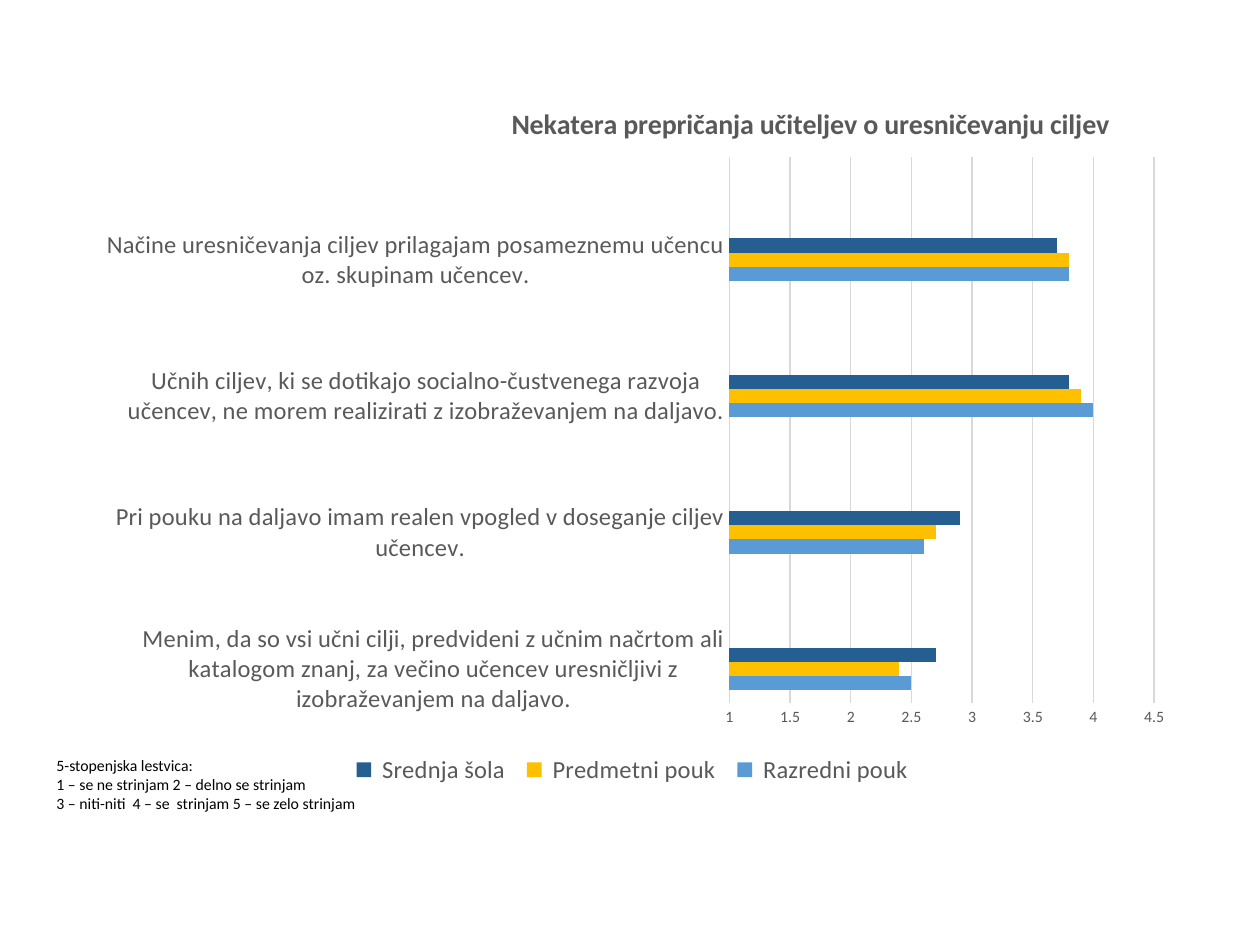
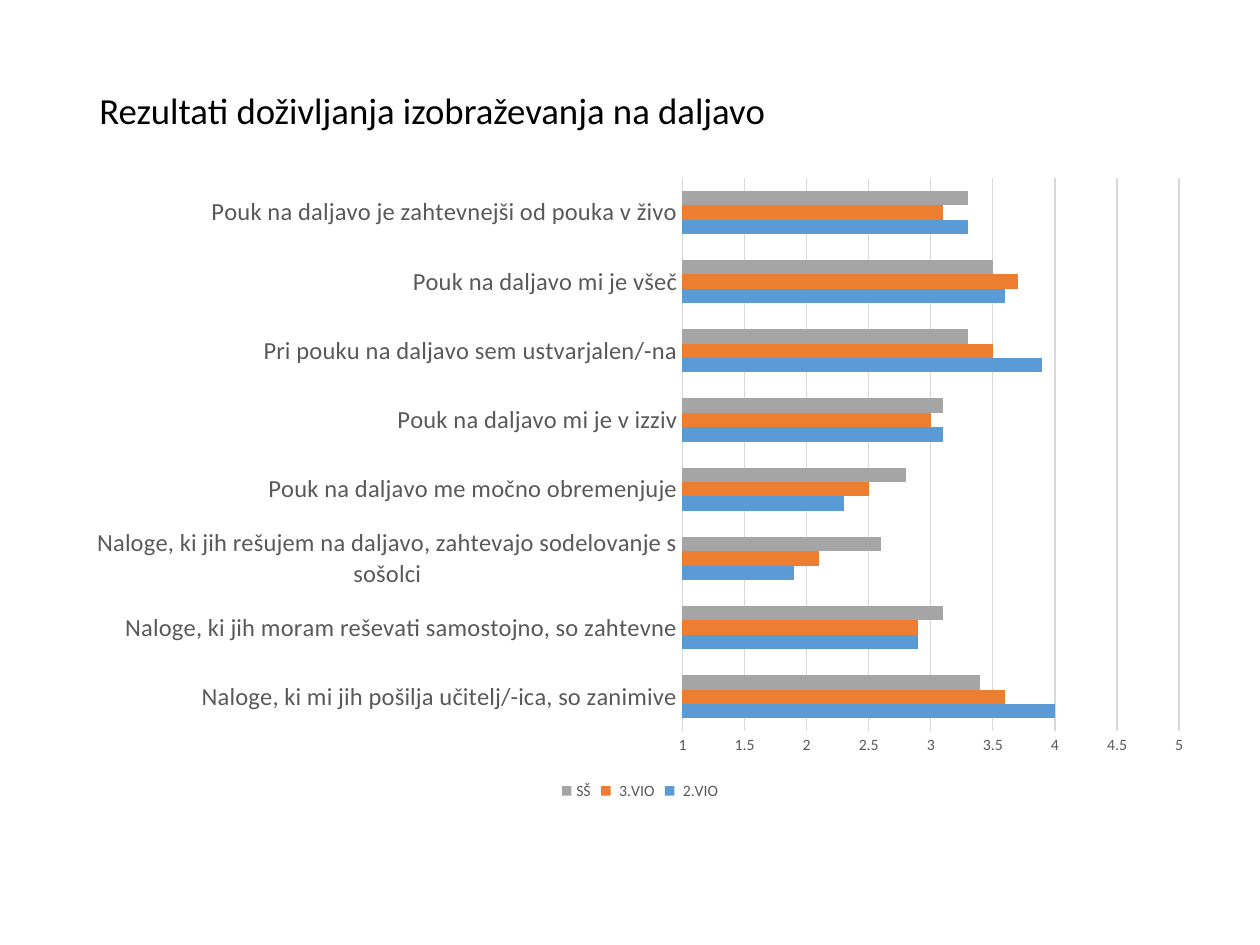
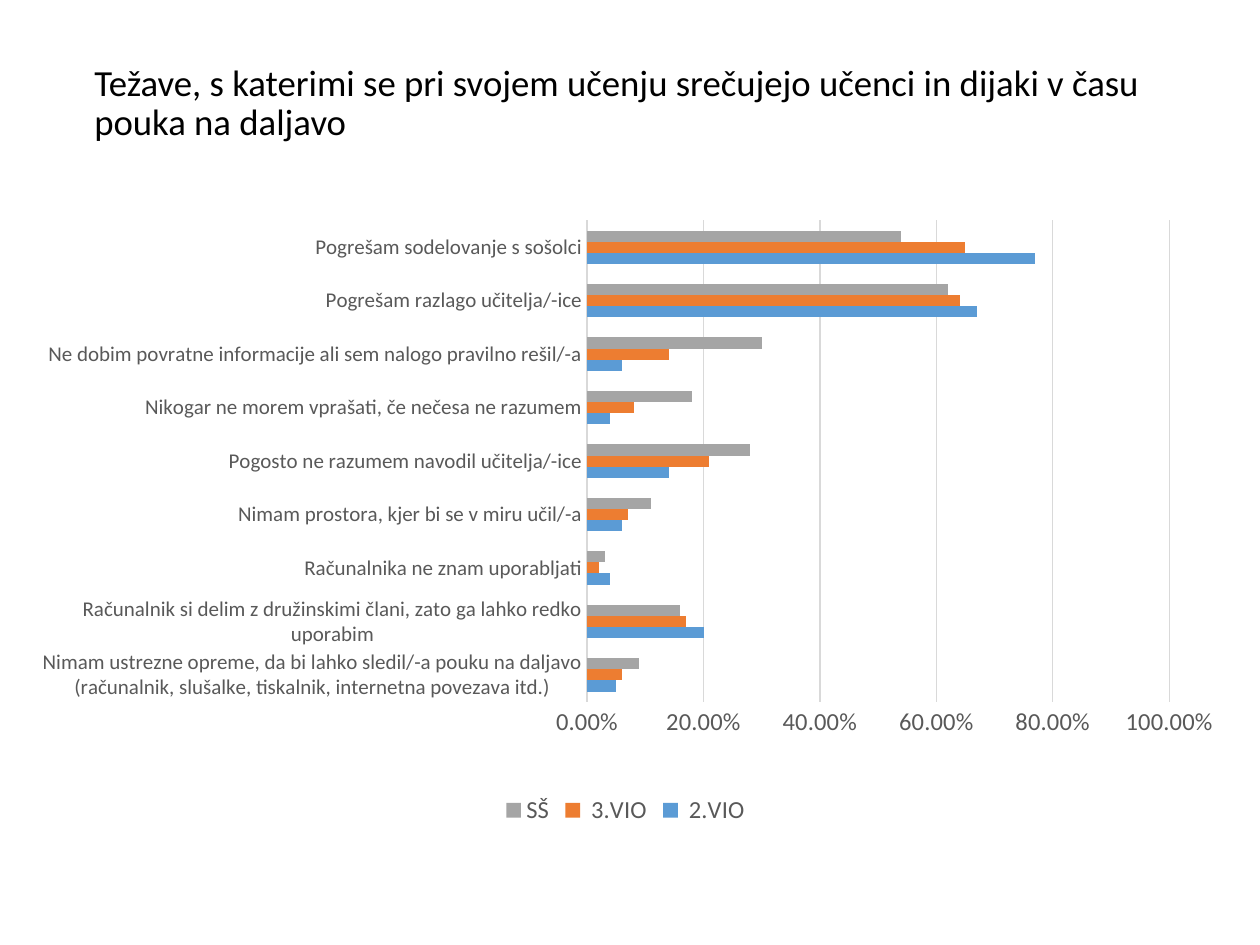
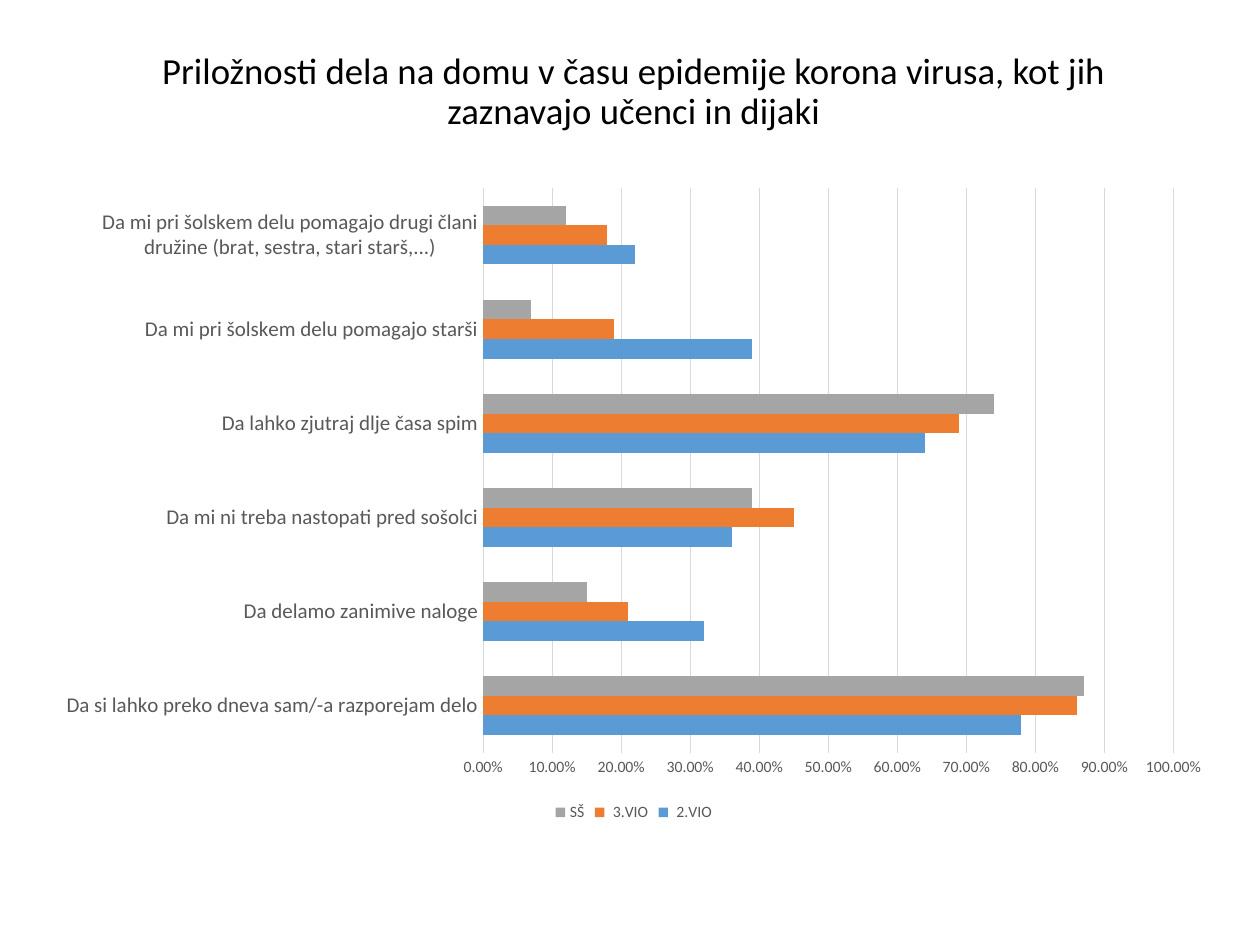
from pptx import Presentation
from pptx.chart.data import CategoryChartData
from pptx.dml.color import RGBColor
from pptx.enum.chart import XL_CHART_TYPE, XL_LEGEND_POSITION, XL_TICK_MARK
from pptx.enum.text import MSO_ANCHOR, PP_ALIGN
from pptx.oxml import parse_xml
from pptx.oxml.ns import nsdecls, qn
from pptx.util import Inches, Pt

COLORS = {
    "text": "000000",
    "label": "595959",
    "grid": "D9D9D9",
    "blue": "5B9BD5",
    "gold": "FFC000",
    "navy": "255E91",
    "orange": "ED7D31",
    "gray": "A5A5A5",
}
FONT = "Calibri"
PUPIL_SERIES = [(" 2.VIO", "blue"), (" 3.VIO", "orange"), ("SŠ", "gray")]


def style_font(font, size, color, bold=False):
    font.name = FONT
    font.size = Pt(size)
    font.bold = bold
    font.color.rgb = RGBColor.from_string(COLORS[color])


def set_layout(element, index, chart_box, left, top, *size):
    chart_left, chart_top, chart_width, chart_height = chart_box
    fractions = [("x", (left - chart_left) / chart_width),
                 ("y", (top - chart_top) / chart_height)]
    if size:
        fractions += [("w", size[0] / chart_width), ("h", size[1] / chart_height)]
    for layout in element.findall(qn("c:layout")):
        element.remove(layout)
    target = '<c:layoutTarget val="inner"/>' if size else ""
    modes = "".join(f'<c:{key}Mode val="edge"/>' for key in ("x", "y"))
    values = "".join(f'<c:{key} val="{value:.4f}"/>' for key, value in fractions)
    element.insert(index, parse_xml(
        f'<c:layout {nsdecls("c")}><c:manualLayout>{target}{modes}{values}'
        "</c:manualLayout></c:layout>"))


slides = [
    {
        "chart_title": "Nekatera prepričanja učiteljev o uresničevanju ciljev",
        "chart_title_at": (4.02, 0.79),
        "note": [
            "5-stopenjska lestvica:",
            "1 – se ne strinjam 2 – delno se strinjam",
            "3 – niti-niti  4 – se  strinjam 5 – se zelo strinjam",
        ],
        "chart_box": (0.67, 0.6, 8.74, 5.67),
        "plot_box": (5.79, 1.25, 3.37, 4.33),
        "scale": (1, 4.5, 0.5),
        "format": "General",
        "sizes": {"category": 14, "value": 9, "legend": 14},
        "series": [(" Razredni pouk ", "blue"), (" Predmetni pouk ", "gold"),
                   (" Srednja šola ", "navy")],
        "rows": [
            ("Menim, da so vsi učni cilji, predvideni z učnim načrtom ali katalogom znanj, "
             "za večino učencev uresničljivi z izobraževanjem na daljavo.", 2.5, 2.4, 2.7),
            ("", None, None, None),
            ("Pri pouku na daljavo imam realen vpogled v doseganje ciljev učencev.",
             2.6, 2.7, 2.9),
            ("", None, None, None),
            ("Učnih ciljev, ki se dotikajo socialno-čustvenega razvoja učencev, "
             "ne morem realizirati z izobraževanjem na daljavo.", 4, 3.9, 3.8),
            ("", None, None, None),
            ("Načine uresničevanja ciljev prilagajam posameznemu učencu oz. skupinam učencev.",
             3.8, 3.8, 3.7),
            ("", None, None, None),
        ],
    },
    {
        "title": "Rezultati doživljanja izobraževanja na daljavo",
        "title_box": (0.69, 0.4, 8.62, 0.99),
        "chart_box": (0.59, 1.31, 8.98, 5.08),
        "scale": (1, 5, 0.5),
        "format": "General",
        "sizes": {"category": 14, "value": 9, "legend": 9},
        "series": PUPIL_SERIES,
        "rows": [
            ("Naloge, ki mi jih pošilja učitelj/-ica, so zanimive", 4, 3.6, 3.4),
            ("Naloge, ki jih moram reševati samostojno, so zahtevne", 2.9, 2.9, 3.1),
            ("Naloge, ki jih rešujem na daljavo, zahtevajo sodelovanje s sošolci", 1.9, 2.1, 2.6),
            ("Pouk na daljavo me močno obremenjuje", 2.3, 2.5, 2.8),
            ("Pouk na daljavo mi je v izziv", 3.1, 3, 3.1),
            ("Pri pouku na daljavo sem ustvarjalen/-na", 3.9, 3.5, 3.3),
            ("Pouk na daljavo mi je všeč", 3.6, 3.7, 3.5),
            ("Pouk na daljavo je zahtevnejši od pouka v živo", 3.3, 3.1, 3.3),
        ],
    },
    {
        "title": "Težave, s katerimi se pri svojem učenju srečujejo učenci in dijaki "
                 "v času pouka na daljavo",
        "title_box": (0.65, 0.1, 8.62, 1.45),
        "chart_box": (0.2, 1.55, 9.53, 5.04),
        "plot_box": (4.66, 1.75, 4.62, 3.82),
        "scale": (0, 1, 0.2),
        "format": "0.00%",
        "sizes": {"category": 12, "value": 14, "legend": 14},
        "series": PUPIL_SERIES,
        "rows": [
            ("Nimam ustrezne opreme, da bi lahko sledil/-a pouku na daljavo "
             "(računalnik, slušalke, tiskalnik, internetna povezava itd.)", 0.05, 0.06, 0.09),
            ("Računalnik si delim z družinskimi člani, zato ga lahko redko uporabim",
             0.2, 0.17, 0.16),
            ("Računalnika ne znam uporabljati", 0.04, 0.02, 0.03),
            ("Nimam prostora, kjer bi se v miru učil/-a", 0.06, 0.07, 0.11),
            ("Pogosto ne razumem navodil učitelja/-ice", 0.14, 0.21, 0.28),
            ("Nikogar ne morem vprašati, če nečesa ne razumem", 0.04, 0.08, 0.18),
            ("Ne dobim povratne informacije ali sem nalogo pravilno rešil/-a", 0.06, 0.14, 0.3),
            ("Pogrešam razlago učitelja/-ice", 0.67, 0.64, 0.62),
            ("Pogrešam sodelovanje s sošolci", 0.77, 0.65, 0.54),
        ],
    },
    {
        "title": "Priložnosti dela na domu v času epidemije korona virusa, "
                 "kot jih zaznavajo učenci in dijaki",
        "title_box": (0.63, 0.42, 8.8, 0.97),
        "centered": True,
        "chart_box": (0.34, 1.39, 9.38, 5.17),
        "scale": (0, 1, 0.1),
        "format": "0.00%",
        "sizes": {"category": 12, "value": 9, "legend": 9},
        "series": PUPIL_SERIES,
        "rows": [
            ("Da si lahko preko dneva sam/-a razporejam delo", 0.78, 0.86, 0.87),
            ("Da delamo zanimive naloge", 0.32, 0.21, 0.15),
            ("Da mi ni treba nastopati pred sošolci", 0.36, 0.45, 0.39),
            ("Da lahko zjutraj dlje časa spim", 0.64, 0.69, 0.74),
            ("Da mi pri šolskem delu pomagajo starši", 0.39, 0.19, 0.07),
            ("Da mi pri šolskem delu pomagajo drugi člani družine (brat, sestra, stari starš,...)",
             0.22, 0.18, 0.12),
        ],
    },
]

presentation = Presentation()
presentation.slide_width = Inches(10)
presentation.slide_height = Inches(7.5)

for content in slides:
    slide = presentation.slides.add_slide(presentation.slide_layouts[6])

    if "title" in content:
        title_box = slide.shapes.add_textbox(*map(Inches, content["title_box"]))
        frame = title_box.text_frame
        frame.word_wrap = True
        frame.vertical_anchor = MSO_ANCHOR.MIDDLE
        paragraph = frame.paragraphs[0]
        paragraph.line_spacing = 0.9
        if content.get("centered"):
            paragraph.alignment = PP_ALIGN.CENTER
            frame.vertical_anchor = MSO_ANCHOR.TOP
            frame.margin_top = 0
        run = paragraph.add_run()
        run.text = content["title"]
        style_font(run.font, 21, "text")

    labels, *columns = zip(*content["rows"])
    chart_data = CategoryChartData()
    chart_data.categories = labels
    for (name, _), values in zip(content["series"], columns):
        chart_data.add_series(name, values)
    chart_box = content["chart_box"]
    chart = slide.shapes.add_chart(
        XL_CHART_TYPE.BAR_CLUSTERED, *map(Inches, chart_box), chart_data).chart
    style_font(chart.font, 10, "text")

    plot = chart.plots[0]
    plot.gap_width = 182
    plot.vary_by_categories = False
    for series, (_, color) in zip(plot.series, content["series"]):
        series.format.fill.solid()
        series.format.fill.fore_color.rgb = RGBColor.from_string(COLORS[color])

    sizes = content["sizes"]
    category_axis, value_axis = chart.category_axis, chart.value_axis
    for axis, size in ((category_axis, sizes["category"]), (value_axis, sizes["value"])):
        axis.major_tick_mark = XL_TICK_MARK.NONE
        axis.minor_tick_mark = XL_TICK_MARK.NONE
        style_font(axis.tick_labels.font, size, "label")
    value_axis.minimum_scale, value_axis.maximum_scale, value_axis.major_unit = content["scale"]
    value_axis.tick_labels.number_format = content["format"]
    value_axis.tick_labels.number_format_is_linked = False
    value_axis.format.line.fill.background()
    value_axis.has_major_gridlines = True
    for line in (category_axis.format.line, value_axis.major_gridlines.format.line):
        line.color.rgb = RGBColor.from_string(COLORS["grid"])
        line.width = Pt(0.75)

    chart.has_legend = True
    chart.legend.position = XL_LEGEND_POSITION.BOTTOM
    chart.legend.include_in_layout = False
    style_font(chart.legend.font, sizes["legend"], "label")

    chart.has_title = "chart_title" in content
    if chart.has_title:
        run = chart.chart_title.text_frame.paragraphs[0].add_run()
        run.text = content["chart_title"]
        style_font(run.font, 16, "label", bold=True)
        set_layout(chart.chart_title._element, 1, chart_box, *content["chart_title_at"])
    if "plot_box" in content:
        plot_area = chart._chartSpace.find(".//" + qn("c:plotArea"))
        set_layout(plot_area, 0, chart_box, *content["plot_box"])

    if "note" in content:
        scale_note = slide.shapes.add_textbox(
            Inches(0.35), Inches(5.95), Inches(2.7), Inches(0.93))
        frame = scale_note.text_frame
        frame.word_wrap = True
        for index, text in enumerate(content["note"]):
            paragraph = frame.add_paragraph() if index else frame.paragraphs[0]
            run = paragraph.add_run()
            run.text = text
            style_font(run.font, 9, "text")

presentation.save("out.pptx")
